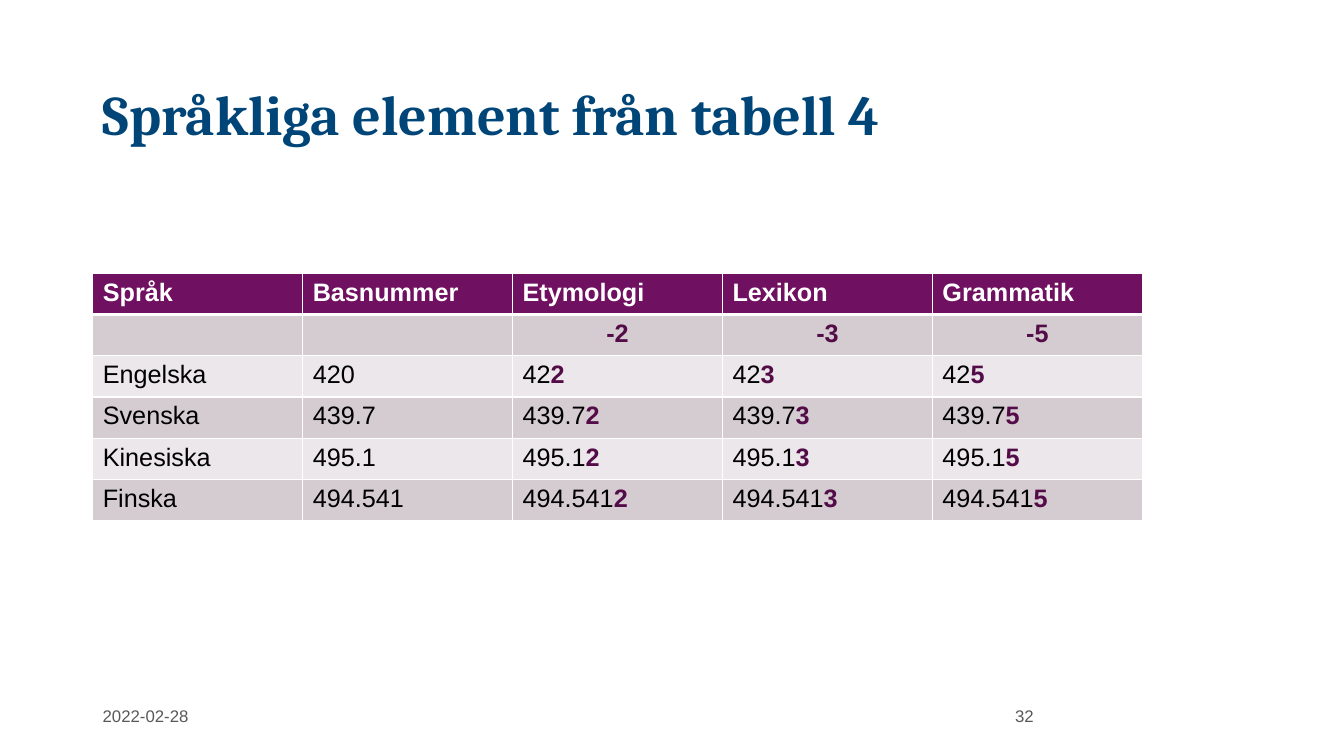
from dataclasses import dataclass

from lxml import etree
from pptx import Presentation
from pptx.dml.color import RGBColor
from pptx.enum import text
from pptx.oxml import ns
from pptx.util import Inches, Pt


@dataclass(frozen=True)
class Theme:
    head: str = "Cambria"
    body: str = "Arial"
    blue: str = "004577"
    plum: str = "701060"
    dark: str = "540C48"
    bands: tuple = ("EBE7EA", "D5CCD2")
    white: str = "FFFFFF"
    black: str = "000000"
    grey: str = "595959"
    big: int = 40
    mid: int = 18
    small: int = 12


THEME = Theme()
HEADS = ["Språk", "Basnummer", "Etymologi", "Lexikon", "Grammatik"]
ENDS = ["2", "3", "5"]
BASES = {
    "Engelska": ("420", "42"),
    "Svenska": ("439.7", "439.7"),
    "Kinesiska": ("495.1", "495.1"),
    "Finska": ("494.541", "494.541"),
}


def style(font, name, size, color, bold=False):
    font.name = name
    font.size = Pt(size)
    font.bold = bold
    font.color.rgb = RGBColor.from_string(color)


def add_title(slide, words, box):
    title = slide.shapes.title
    title.left, title.top, title.width, title.height = map(Inches, box)
    frame = title.text_frame
    frame.text = words
    frame.auto_size = text.MSO_AUTO_SIZE.NONE
    frame.vertical_anchor = text.MSO_ANCHOR.TOP
    para = frame.paragraphs[0]
    para.alignment = text.PP_ALIGN.LEFT
    para.line_spacing = 0.9
    style(para.font, THEME.head, THEME.big, THEME.blue, True)


def add_edges(cell, row):
    props = cell._tc.get_or_add_tcPr()
    widths = {"L": 1, "R": 1, "T": 3 if row == 1 else 1, "B": 3 if row == 0 else 1}
    for side, width in widths.items():
        line = etree.SubElement(props, ns.qn("a:ln" + side), w=str(Pt(width)))
        fill = etree.SubElement(line, ns.qn("a:solidFill"))
        etree.SubElement(fill, ns.qn("a:srgbClr"), val=THEME.white)


def fill_cell(cell, row, stem, end):
    add_edges(cell, row)
    cell.fill.solid()
    shade = THEME.bands[row % 2] if row else THEME.plum
    cell.fill.fore_color.rgb = RGBColor.from_string(shade)
    para = cell.text_frame.paragraphs[0]
    color = (THEME.white, THEME.dark)[row] if row < 2 else THEME.black
    style(para.font, THEME.body, THEME.mid, color, row < 2)
    if row == 1:
        para.alignment = text.PP_ALIGN.CENTER
    if stem:
        para.add_run().text = stem
    if end:
        run = para.add_run()
        run.text = end
        run.font.bold = True
        run.font.color.rgb = RGBColor.from_string(THEME.dark)


def add_grid(slide, box):
    rows = [[(head, "") for head in HEADS]]
    rows.append([("", "")] * 2 + [("-" + end, "") for end in ENDS])
    for name, (base, stem) in BASES.items():
        rows.append([(name, ""), (base, "")] + [(stem, end) for end in ENDS])
    table = slide.shapes.add_table(len(rows), len(HEADS), *map(Inches, box)).table
    for row, parts in enumerate(rows):
        for col, (stem, end) in enumerate(parts):
            fill_cell(table.cell(row, col), row, stem, end)


def add_foot(slide, words, box):
    frame = slide.shapes.add_textbox(*map(Inches, box)).text_frame
    frame.word_wrap = True
    frame.text = words
    style(frame.paragraphs[0].font, THEME.body, THEME.small, THEME.grey)


def main():
    deck = Presentation()
    deck.slide_width, deck.slide_height = Inches(13.33), Inches(7.5)
    slide = deck.slides.add_slide(deck.slide_layouts[5])
    left = 0.92
    add_title(slide, "Språkliga element från tabell 4", (left, 0.81, 11.58, 1.39))
    add_grid(slide, (left, 2.71, 10.41, 2.46))
    for words, start in (("2022-02-28", left), ("32", 9.97)):
        add_foot(slide, words, (start, 6.95, 3, 0.4))
    deck.save("out.pptx")


if __name__ == "__main__":
    main()
